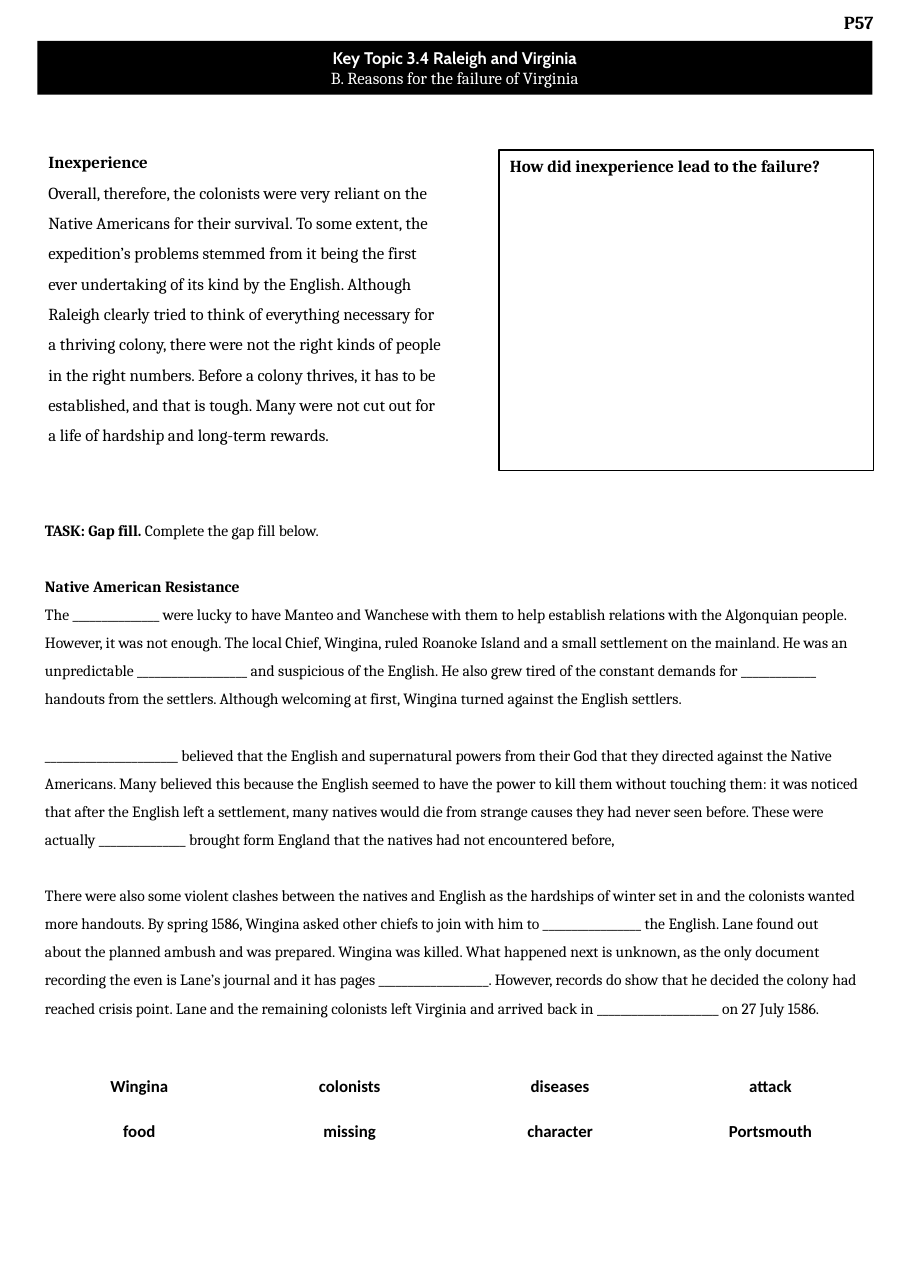
from dataclasses import dataclass
from typing import Optional

from pptx import Presentation
from pptx.dml.color import RGBColor
from pptx.enum.shapes import MSO_SHAPE
from pptx.enum.text import MSO_ANCHOR, PP_ALIGN
from pptx.util import Emu, Pt

RECTANGLE = MSO_SHAPE.RECTANGLE
TOP, MIDDLE = MSO_ANCHOR.TOP, MSO_ANCHOR.MIDDLE
LEFT, CENTER = PP_ALIGN.LEFT, PP_ALIGN.CENTER
EMU_PER_PX = 9144


@dataclass(frozen=True)
class Theme:
    black: RGBColor = RGBColor(0, 0, 0)
    white: RGBColor = RGBColor(255, 255, 255)
    serif: str = "Cambria"
    title: str = "Cabin"
    sans: str = "Calibri"
    page_size: float = 12
    body_size: float = 11
    task_size: float = 10.2
    paragraph_gap: float = 18.4


THEME = Theme()


@dataclass(frozen=True)
class Line:
    text: str
    bold: bool = False
    font: str = THEME.serif
    rest: str = ""
    gap: float = 0


@dataclass(frozen=True)
class Block:
    left: int
    top: int
    width: int
    height: int
    lines: tuple[Line, ...]
    size: float = THEME.body_size
    color: RGBColor = THEME.black
    align: PP_ALIGN = LEFT
    anchor: MSO_ANCHOR = TOP
    spacing: float = 1.0
    inset_x: int = 10
    inset_y: int = 5
    fill: Optional[RGBColor] = None
    border: Optional[RGBColor] = None


PAGE_NUMBER = Block(749, 0, 61, 89, (Line("P57", True),), size=THEME.page_size,
                    align=CENTER, inset_y=10)
HEADER = Block(34, 37, 758, 49, (
    Line("Key Topic 3.4 Raleigh and Virginia", True, THEME.title),
    Line("B. Reasons for the failure of Virginia"),
), color=THEME.white, align=CENTER, anchor=MIDDLE, inset_y=10, fill=THEME.black)
INEXPERIENCE = Block(34, 124, 379, 312, (
    Line("Inexperience", True),
    Line("Overall, therefore, the colonists were very reliant on the Native Americans for "
         "their survival. To some extent, the expedition’s problems stemmed from it being the "
         "first ever undertaking of its kind by the English. Although Raleigh clearly tried to "
         "think of everything necessary for a thriving colony, there were not the right kinds "
         "of people in the right numbers. Before a colony thrives, it has to be established, "
         "and that is tough. Many were not cut out for a life of hardship and long-term "
         "rewards."),
), spacing=1.5)
GAP_FILL = Block(31, 459, 758, 517, (
    Line("TASK: Gap fill. ", True, rest="Complete the gap fill below."),
    Line("Native American Resistance", True, gap=THEME.paragraph_gap),
    Line("The _______________ were lucky to have Manteo and Wanchese with them to help "
         "establish relations with the Algonquian people. However, it was not enough. The "
         "local Chief, Wingina, ruled Roanoke Island and a small settlement on the mainland. "
         "He was an unpredictable ___________________ and suspicious of the English. He also "
         "grew tired of the constant demands for _____________ handouts from the settlers. "
         "Although welcoming at first, Wingina turned against the English settlers."),
    Line("_______________________ believed that the English and supernatural powers from "
         "their God that they directed against the Native Americans. Many believed this "
         "because the English seemed to have the power to kill them without touching them: it "
         "was noticed that after the English left a settlement, many natives would die from "
         "strange causes they had never seen before. These were actually _______________ "
         "brought form England that the natives had not encountered before,",
         gap=THEME.paragraph_gap),
    Line("There were also some violent clashes between the natives and English as the "
         "hardships of winter set in and the colonists wanted more handouts. By spring 1586, "
         "Wingina asked other chiefs to join with him to _________________ the English. Lane "
         "found out about the planned ambush and was prepared. Wingina was killed. What "
         "happened next is unknown, as the only document recording the even is Lane’s journal "
         "and it has pages ___________________. However, records do show that he decided the "
         "colony had reached crisis point. Lane and the remaining colonists left Virginia and "
         "arrived back in _____________________ on 27 July 1586.", gap=THEME.paragraph_gap),
), size=THEME.task_size, spacing=1.5)
QUESTION = Block(453, 136, 340, 291, (
    Line("How did inexperience lead to the failure?", True),
), fill=THEME.white, border=THEME.black)
BLOCKS = (PAGE_NUMBER, HEADER, INEXPERIENCE, GAP_FILL, QUESTION)

WORD_BANK = (
    ("Wingina", "colonists", "diseases", "attack"),
    ("food", "missing", "character", "Portsmouth"),
)


def px(length: int) -> Emu:
    return Emu(length * EMU_PER_PX)


def style_run(run, size: float, color: RGBColor, font: str, bold: bool) -> None:
    run.font.size = Pt(size)
    run.font.color.rgb = color
    run.font.name = font
    run.font.bold = bold


def write_line(paragraph, line: Line, block: Block) -> None:
    paragraph.text = line.text
    paragraph.alignment = block.align
    paragraph.line_spacing = block.spacing
    paragraph.space_before = Pt(line.gap)
    style_run(paragraph.runs[0], block.size, block.color, line.font, line.bold)
    if line.rest:
        run = paragraph.add_run()
        run.text = line.rest
        style_run(run, block.size, block.color, line.font, False)


def draw_block(slide, block: Block) -> None:
    bounds = [px(length) for length in (block.left, block.top, block.width, block.height)]
    if block.fill is None:
        shape = slide.shapes.add_textbox(*bounds)
    else:
        shape = slide.shapes.add_shape(RECTANGLE, *bounds)
        shape.shadow.inherit = False
        shape.fill.solid()
        shape.fill.fore_color.rgb = block.fill
        if block.border is None:
            shape.line.fill.background()
        else:
            shape.line.color.rgb = block.border
            shape.line.width = Pt(1)
    frame = shape.text_frame
    frame.word_wrap = True
    frame.vertical_anchor = block.anchor
    frame.margin_left = frame.margin_right = px(block.inset_x)
    frame.margin_top = frame.margin_bottom = px(block.inset_y)
    for index, line in enumerate(block.lines):
        paragraph = frame.add_paragraph() if index else frame.paragraphs[0]
        write_line(paragraph, line, block)


def draw_word_bank(slide, words: tuple[tuple[str, ...], ...]) -> None:
    table = slide.shapes.add_table(
        len(words), len(words[0]), px(31), px(966), px(764), px(82)).table
    table.first_row = False
    table.horz_banding = False
    for row, row_words in zip(table.rows, words):
        for cell, word in zip(row.cells, row_words):
            cell.fill.solid()
            cell.fill.fore_color.rgb = THEME.white
            cell.vertical_anchor = MIDDLE
            paragraph = cell.text_frame.paragraphs[0]
            paragraph.text = word
            paragraph.alignment = CENTER
            style_run(paragraph.runs[0], THEME.body_size, THEME.black, THEME.sans, True)


def main() -> None:
    presentation = Presentation()
    presentation.slide_width = px(827)
    presentation.slide_height = px(1169)
    slide = presentation.slides.add_slide(presentation.slide_layouts[6])
    for block in BLOCKS:
        draw_block(slide, block)
    draw_word_bank(slide, WORD_BANK)
    presentation.save("out.pptx")


if __name__ == "__main__":
    main()
